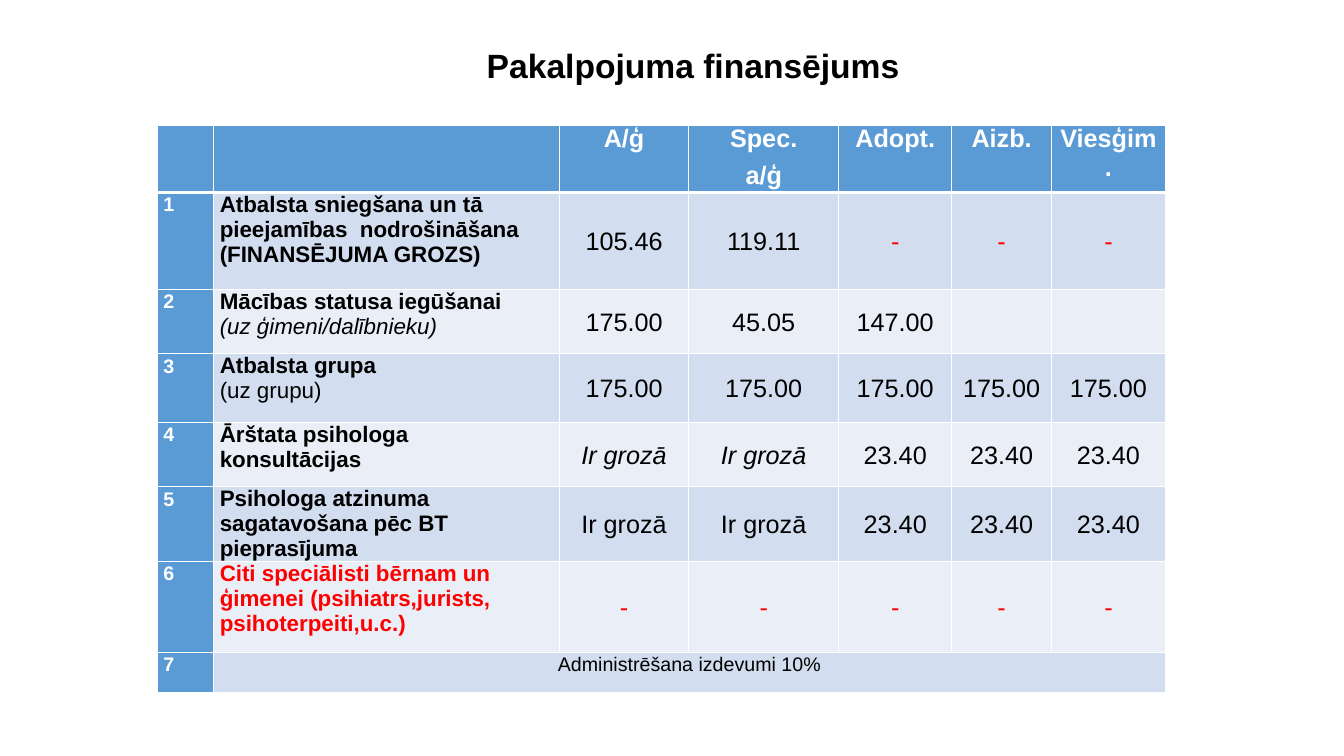
import copy

import pptx
import pptx.dml.color
import pptx.enum.text
import pptx.oxml
import pptx.oxml.ns
import pptx.util

Inches = pptx.util.Inches
Pt = pptx.util.Pt
CENTER = pptx.enum.text.PP_ALIGN.CENTER
LEFT = pptx.enum.text.PP_ALIGN.LEFT
MIDDLE = pptx.enum.text.MSO_ANCHOR.MIDDLE
TOP = pptx.enum.text.MSO_ANCHOR.TOP

COLORS = {
    "black": "000000",
    "white": "FFFFFF",
    "red": "FF0000",
    "header": "5B9BD5",
    "odd": "D2DEEF",
    "even": "EAEFF7",
}

TITLE = {"size": Pt(24), "bold": True}
HEADING = {"size": Pt(18), "bold": True, "color": "white"}
NUMBER = {"size": Pt(14), "bold": True, "color": "white"}
SERVICE = {"size": Pt(16), "bold": True}
DETAIL = {"size": Pt(16), "bold": False}
AMOUNT = {"size": Pt(18), "bold": False}
FOOTER = {"size": Pt(14), "bold": False}

HEADING_PARAGRAPH = {"alignment": CENTER, "space_before": Pt(6)}
NUMBER_PARAGRAPH = {"alignment": LEFT, "line_spacing": 1.07}
SERVICE_PARAGRAPH = {"alignment": LEFT, "space_before": Pt(12)}
AMOUNT_PARAGRAPH = {"alignment": CENTER, "line_spacing": 1.07}

COLUMN_WIDTHS = [0.56, 3.43, 1.28, 1.49, 1.12, 0.99, 1.13]
ROW_HEIGHTS = [0.67, 0.96, 0.64, 0.68, 0.64, 0.64, 0.9, 0.4]
HEADINGS = ["", "", "A/ģ", "Spec.\na/ģ", "Adopt.", "Aizb.", "Viesģim."]

RED = {"color": "red"}
ITALIC = {"italic": True}

# Each service: runs of its name (a new line per run), then amounts with their format.
SERVICES = [
    ([("Atbalsta sniegšana un tā pieejamības  nodrošināšana (FINANSĒJUMA GROZS)", SERVICE)],
     [("105.46", {}), ("119.11", {})] + [("-", RED)] * 3),
    ([("Mācības statusa iegūšanai ", SERVICE), ("(uz ģimeni/dalībnieku)", DETAIL | ITALIC)],
     [("175.00", {}), ("45.05", {}), ("147.00", {}), ("", {}), ("", {})]),
    ([("Atbalsta grupa ", SERVICE), ("(uz grupu)", DETAIL)],
     [("175.00", {})] * 5),
    ([("Ārštata psihologa konsultācijas", SERVICE)],
     [("Ir grozā", ITALIC)] * 2 + [("23.40", {})] * 3),
    ([("Psihologa atzinuma sagatavošana pēc BT pieprasījuma", SERVICE)],
     [("Ir grozā", {})] * 2 + [("23.40", {})] * 3),
    ([("Citi speciālisti bērnam un ģimenei (psihiatrs,jurists, psihoterpeiti,u.c.)",
       SERVICE | RED)],
     [("-", RED)] * 5),
]


class FinancingSlide:
    def __init__(self, presentation, font="Arial"):
        self.slide = presentation.slides.add_slide(presentation.slide_layouts[5])
        self.font = font

    def color(self, name):
        return pptx.dml.color.RGBColor.from_string(COLORS[name])

    def fill_paragraph(self, paragraph, runs, layout):
        """Fill a paragraph with (text, format) runs, one line each."""
        for name, value in layout.items():
            setattr(paragraph, name, value)
        for index, (text, style) in enumerate(runs):
            if index:
                paragraph.add_line_break()
                line_break = paragraph._p.findall(pptx.oxml.ns.qn("a:br"))[-1]
                line_break.append(copy.deepcopy(run.font._rPr))
            run = paragraph.add_run()
            run.text = text
            style = {"name": self.font, "color": "black"} | style
            run.font.color.rgb = self.color(style.pop("color"))
            for name, value in style.items():
                setattr(run.font, name, value)

    def title(self, text):
        title = self.slide.shapes.title
        place = {"left": 1.56, "top": 0.28, "width": 10.63, "height": 0.79}
        for name, value in place.items():
            setattr(title, name, Inches(value))
        title.text_frame.vertical_anchor = MIDDLE
        self.fill_paragraph(title.text_frame.paragraphs[0], [(text, TITLE)],
                            {"alignment": CENTER, "line_spacing": 0.9})

    def table(self, left, top, widths, heights):
        frame = self.slide.shapes.add_table(
            len(heights), len(widths), Inches(left), Inches(top),
            Inches(sum(widths)), Inches(sum(heights)))
        for column, width in zip(frame.table.columns, widths):
            column.width = Inches(width)
        for row, height in zip(frame.table.rows, heights):
            row.height = Inches(height)
        return frame.table

    def border(self, cell, side, width):
        cell._tc.get_or_add_tcPr().append(pptx.oxml.parse_xml(
            f'<a:ln{side} {pptx.oxml.ns.nsdecls("a")} w="{Pt(width)}"><a:solidFill>'
            f'<a:srgbClr val="{COLORS["white"]}"/></a:solidFill></a:ln{side}>'))

    def cell(self, cell, fill, lines, layout, anchor=TOP, top=1, bottom=1):
        """Format a cell; lines holds the runs of each of its paragraphs."""
        for side, width in {"L": 1, "R": 1, "T": top, "B": bottom}.items():
            self.border(cell, side, width)
        cell.fill.solid()
        cell.fill.fore_color.rgb = self.color(fill)
        if not lines[0][0][0]:
            return
        insets = {"margin_left": 0.06, "margin_right": 0.06, "margin_top": 0, "margin_bottom": 0}
        for name, value in insets.items():
            setattr(cell, name, Inches(value))
        cell.vertical_anchor = anchor
        for index, runs in enumerate(lines):
            frame = cell.text_frame
            paragraph = frame.add_paragraph() if index else frame.paragraphs[0]
            self.fill_paragraph(paragraph, runs, layout)

    def financing(self):
        table = self.table(1.56, 1.24, COLUMN_WIDTHS, ROW_HEIGHTS)
        for column, heading in enumerate(HEADINGS):
            lines = [[(line, HEADING)] for line in heading.split("\n")]
            self.cell(table.cell(0, column), "header", lines, HEADING_PARAGRAPH, bottom=3)

        for row in range(1, len(ROW_HEIGHTS)):
            self.cell(table.cell(row, 0), "header", [[(str(row), NUMBER)]],
                      NUMBER_PARAGRAPH, top=3 if row == 1 else 1)

        for row, (service, amounts) in enumerate(SERVICES, 1):
            band = "odd" if row % 2 else "even"
            top = 3 if row == 1 else 1
            self.cell(table.cell(row, 1), band, [service], SERVICE_PARAGRAPH, top=top)
            for column, (amount, style) in enumerate(amounts, 2):
                self.cell(table.cell(row, column), band, [[(amount, AMOUNT | style)]],
                          AMOUNT_PARAGRAPH, MIDDLE, top=top)

        last = len(ROW_HEIGHTS) - 1
        administration = table.cell(last, 1)
        administration.merge(table.cell(last, len(COLUMN_WIDTHS) - 1))
        self.cell(administration, "odd", [[("Administrēšana izdevumi 10%", FOOTER)]],
                  AMOUNT_PARAGRAPH)


def main():
    presentation = pptx.Presentation()
    presentation.slide_width = Inches(13.33)
    presentation.slide_height = Inches(7.5)
    slide = FinancingSlide(presentation)
    slide.title("Pakalpojuma finansējums")
    slide.financing()
    presentation.save("out.pptx")


if __name__ == "__main__":
    main()
